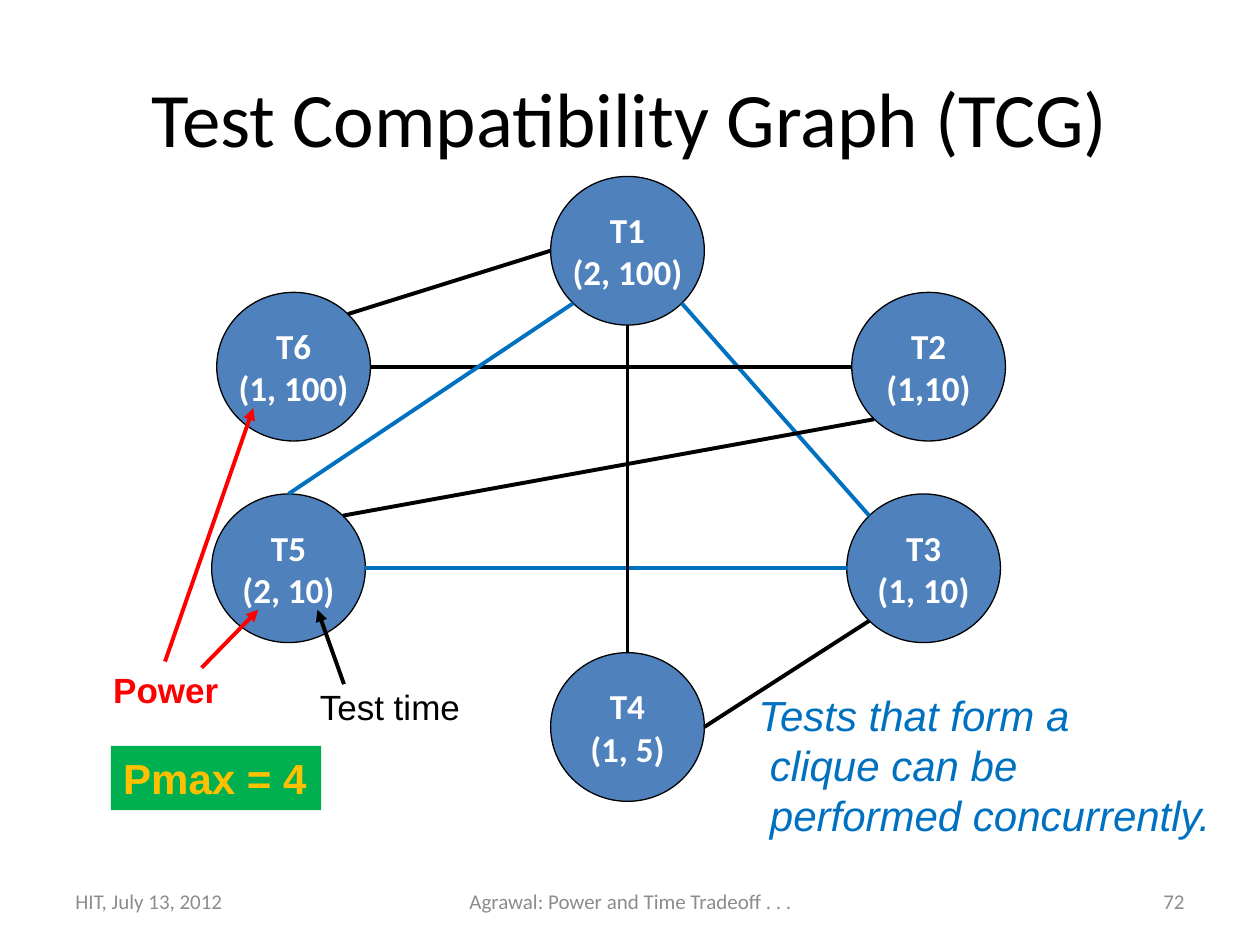
from math import cos, pi, sin

from lxml.etree import SubElement
from pptx import Presentation
from pptx.dml.color import RGBColor
from pptx.enum.shapes import MSO_CONNECTOR, MSO_SHAPE
from pptx.enum.text import MSO_ANCHOR, MSO_AUTO_SIZE, PP_ALIGN
from pptx.oxml.ns import qn
from pptx.util import Inches, Pt

COLORS = {
    "black": "000000",
    "white": "FFFFFF",
    "gray": "8C8C8C",
    "node": "4F81BD",
    "clique": "0070C0",
    "power": "FF0000",
    "limit_fill": "00B050",
    "limit_text": "FFC000",
}
NODE_WIDTH, NODE_HEIGHT = 1.22, 1.18
TOP, TOP_LEFT, LEFT, BOTTOM_LEFT, BOTTOM, BOTTOM_RIGHT, RIGHT, TOP_RIGHT = range(8)

NODES = {
    "T1": (4.37, 1.4, "(2, 100)"),
    "T2": (6.76, 2.32, "(1,10)"),
    "T3": (6.72, 3.92, "(1, 10)"),
    "T4": (4.37, 5.18, "(1, 5)"),
    "T5": (1.68, 3.92, "(2, 10)"),
    "T6": (1.72, 2.32, "(1, 100)"),
}
EDGES = [
    ("T1", LEFT, "T6", TOP_RIGHT, "black"),
    ("T1", BOTTOM_RIGHT, "T3", TOP_LEFT, "clique"),
    ("T2", LEFT, "T6", RIGHT, "black"),
    ("T2", BOTTOM_LEFT, "T5", TOP_RIGHT, "black"),
    ("T3", LEFT, "T5", RIGHT, "clique"),
    ("T3", BOTTOM_LEFT, "T4", RIGHT, "black"),
    ("T1", BOTTOM, "T4", TOP, "black"),
    ("T5", TOP, "T1", BOTTOM_LEFT, "clique"),
]
FOOTERS = [
    (0.5, 2.33, "HIT, July 13, 2012", PP_ALIGN.LEFT),
    (3.42, 3.17, "Agrawal: Power and Time Tradeoff . . .", PP_ALIGN.CENTER),
    (7.17, 2.33, "72", PP_ALIGN.RIGHT),
]
ARROWS = [
    ((1.6, 5.3), (2.05, 4.84), "power"),
    ((2.73, 5.43), (2.52, 4.84), "black"),
    ((1.31, 5.25), (2.01, 3.24), "power"),
]


class GraphSlide:
    """Draws the parts of a test graph on one slide in a shared style."""

    def __init__(self, slide):
        self.slide = slide
        self.nodes = {}

    def color(self, name):
        return RGBColor.from_string(COLORS[name])

    def set_text(self, shape, text, size, color, font="Arial", align=PP_ALIGN.LEFT,
                 anchor=MSO_ANCHOR.TOP, wrap=False, bold=False, italic=False):
        frame = shape.text_frame
        frame.text = text
        frame.word_wrap = wrap
        frame.vertical_anchor = anchor
        for paragraph in frame.paragraphs:
            paragraph.alignment = align
            for run in paragraph.runs:
                run.font.name = font
                run.font.size = Pt(size)
                run.font.bold = bold
                run.font.italic = italic
                run.font.color.rgb = self.color(color)

    def text(self, box, text, size, color, **style):
        shape = self.slide.shapes.add_textbox(*map(Inches, box))
        self.set_text(shape, text, size, color, **style)
        return shape

    def label(self, box, text, size, color, **style):
        shape = self.text(box, text, size, color, **style)
        shape.text_frame.auto_size = MSO_AUTO_SIZE.SHAPE_TO_FIT_TEXT

    def shape(self, kind, box, fill):
        shape = self.slide.shapes.add_shape(kind, *map(Inches, box))
        shape.shadow.inherit = False
        shape.fill.solid()
        shape.fill.fore_color.rgb = self.color(fill)
        return shape

    def node(self, name, left, top, values):
        box = (left, top, NODE_WIDTH, NODE_HEIGHT)
        shape = self.shape(MSO_SHAPE.OVAL, box, "node")
        shape.line.color.rgb = self.color("black")
        shape.line.width = Pt(0.75)
        self.set_text(shape, f"{name}\n{values}", 20, "white", font="Calibri",
                      align=PP_ALIGN.CENTER, anchor=MSO_ANCHOR.MIDDLE, bold=True)
        self.nodes[name] = shape

    def badge(self, box, text, size, fill, color):
        shape = self.shape(MSO_SHAPE.RECTANGLE, box, fill)
        shape.line.fill.background()
        self.set_text(shape, text, size, color, bold=True)
        shape.text_frame.auto_size = MSO_AUTO_SIZE.SHAPE_TO_FIT_TEXT

    def line(self, start, end, color):
        connector = self.slide.shapes.add_connector(
            MSO_CONNECTOR.STRAIGHT, *map(Inches, start + end))
        connector.line.color.rgb = self.color(color)
        connector.line.width = Pt(2.25)
        SubElement(connector.element.spPr, qn("a:effectLst"))
        return connector

    def arrow(self, start, end, color):
        connector = self.line(start, end, color)
        outline = connector.element.spPr.find(qn("a:ln"))
        SubElement(outline, qn("a:tailEnd"), type="triangle")

    def site(self, name, index):
        left, top, _ = NODES[name]
        angle = index * pi / 4
        return (left + NODE_WIDTH / 2 * (1 - sin(angle)),
                top + NODE_HEIGHT / 2 * (1 - cos(angle)))

    def edge(self, first, first_site, second, second_site, color):
        connector = self.line(self.site(first, first_site),
                              self.site(second, second_site), color)
        properties = connector.element.find(".//" + qn("p:cNvCxnSpPr"))
        for tag, name, index in (("a:stCxn", first, first_site),
                                 ("a:endCxn", second, second_site)):
            SubElement(properties, qn(tag), id=str(self.nodes[name].shape_id),
                       idx=str(index))


def main():
    presentation = Presentation()
    presentation.slide_width = Inches(10)
    presentation.slide_height = Inches(7.5)
    graph = GraphSlide(presentation.slides.add_slide(presentation.slide_layouts[6]))

    for left, width, text, align in FOOTERS:
        graph.text((left, 6.95, width, 0.4), text, 12, "gray", font="Calibri",
                   align=align, anchor=MSO_ANCHOR.MIDDLE, wrap=True)
    graph.text((0.5, 0.3, 9, 1.25), "Test Compatibility Graph (TCG)", 44, "black",
               font="Calibri", align=PP_ALIGN.CENTER, anchor=MSO_ANCHOR.MIDDLE,
               wrap=True)
    for name, (left, top, values) in NODES.items():
        graph.node(name, left, top, values)
    for edge in EDGES:
        graph.edge(*edge)

    graph.label((5.92, 5.42, 3.83, 1.31),
                "Tests that form a\n clique can be\n performed concurrently.",
                24, "clique", italic=True)
    graph.label((0.8, 5.26, 1.04, 0.44), "Power", 20, "power", bold=True)
    graph.label((2.44, 5.39, 1.34, 0.43), "Test time", 20, "black")
    graph.badge((0.88, 5.92, 1.67, 0.51), "Pmax = 4", 24, "limit_fill", "limit_text")
    for start, end, color in ARROWS:
        graph.arrow(start, end, color)

    presentation.save("out.pptx")


if __name__ == "__main__":
    main()
